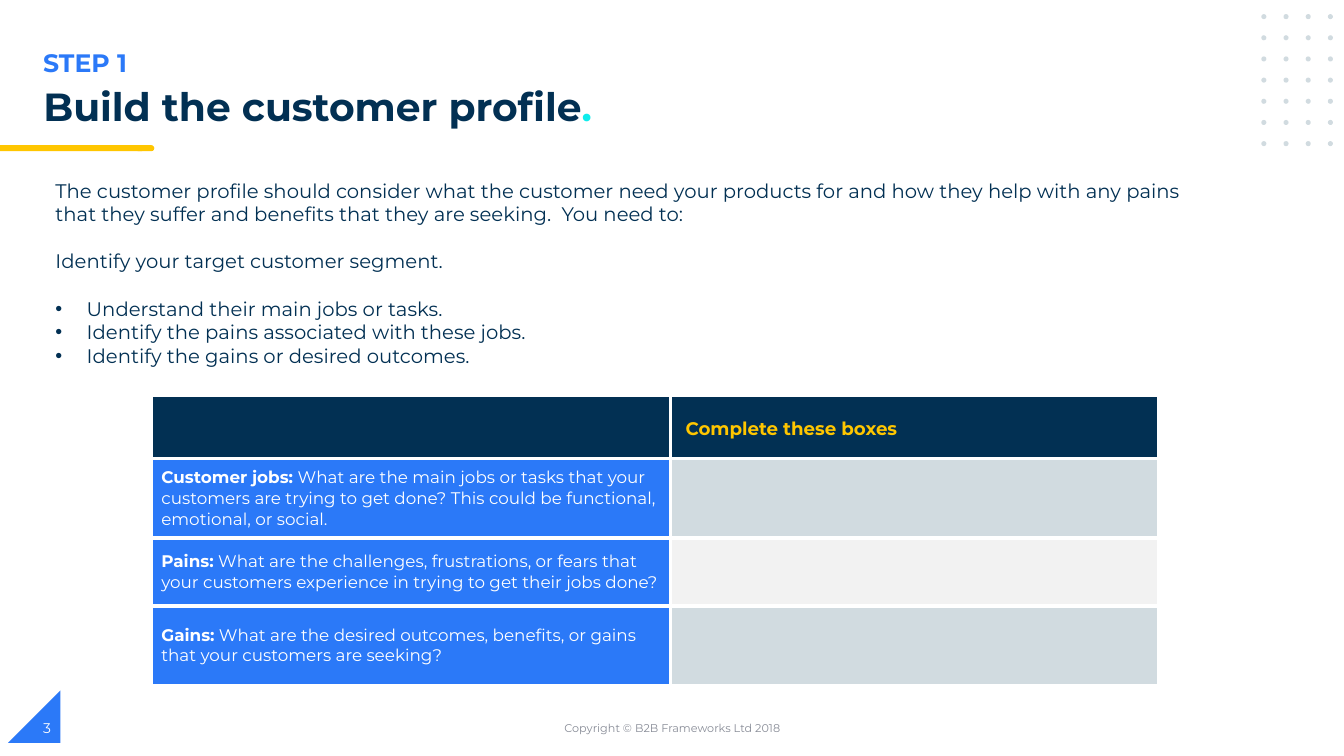
"""Build the customer profile slide with its heading, steps and worksheet table."""
from lxml import etree
from pptx import Presentation
from pptx.dml.color import RGBColor
from pptx.enum.shapes import MSO_SHAPE
from pptx.enum.text import MSO_ANCHOR, MSO_AUTO_SIZE, PP_ALIGN
from pptx.oxml.ns import qn
from pptx.util import Inches, Pt

OVAL, RECT = MSO_SHAPE.OVAL, MSO_SHAPE.RECTANGLE
WEDGE, CAP = MSO_SHAPE.RIGHT_TRIANGLE, MSO_SHAPE.FLOWCHART_TERMINATOR
TOP, MID = MSO_ANCHOR.TOP, MSO_ANCHOR.MIDDLE
LEFT, MIDDLE = PP_ALIGN.LEFT, PP_ALIGN.CENTER
FIXED = MSO_AUTO_SIZE.NONE

NAVY, BLUE, GOLD, AQUA = "023053", "2B79F8", "FFC600", "0EECEC"
MIST, PALE, GREY, WHITE = "D1DBE0", "F2F2F2", "888C97", "FFFFFF"

TITLE = [("Build the customer profile", NAVY), (".", AQUA)]
LABELS = [
    ("STEP 1", (0.33, 0.42, 6.69, 0.4), TOP, LEFT, 18, BLUE, True),
    ("Copyright © B2B Frameworks Ltd 2018", (4.42, 7.02, 4.5, 0.4),
     MID, MIDDLE, 8, GREY, False),
    ("3", (0.33, 7.02, 3, 0.4), MID, LEFT, 10, WHITE, False),
]
BODY = [
    ("The customer profile should consider what the customer need your "
     "products for and how they help with any pains that they suffer and "
     "benefits that they are seeking.  You need to:", 0, False),
    ("Identify your target customer segment.", 17, False),
    ("Understand their main jobs or tasks.", 17, True),
    ("Identify the pains associated with these jobs.", 0, True),
    ("Identify the gains or desired outcomes.", 0, True),
]
HEAD = "Complete these boxes"
ROWS = [
    ("Customer jobs:", " What are the main jobs or tasks that your customers "
     "are trying to get done? This could be functional, emotional, or social.",
     MIST),
    ("Pains:", " What are the challenges, frustrations, or fears that your "
     "customers experience in trying to get their jobs done?", PALE),
    ("Gains:", " What are the desired outcomes, benefits, or gains that your "
     "customers are seeking?", MIST),
]
WIDTHS = [5.15, 4.84]
HEIGHTS = [0.63, 0.79, 0.67, 0.79]
MARKS = [
    (WEDGE, (0.08, 6.85, 0.52, 0.52), BLUE),
    (CAP, (1.34, 1.44, 0.19, 0.06), GOLD),
    (RECT, (0, 1.44, 1.41, 0.06), GOLD),
]
DOTS = [(OVAL, (12.51 + 0.22 * col, 0.14 + 0.21 * row, 0.05, 0.05), MIST)
        for row in range(7) for col in range(4)]


def paint(hue):
    return RGBColor.from_string(hue)


def assign(item, vals):
    for name, val in vals.items():
        setattr(item, name, val)


def place(shape, box):
    names = ("left", "top", "width", "height")
    assign(shape, dict(zip(names, map(Inches, box))))


def write(para, text, size, hue, bold=False):
    run = para.add_run()
    run.text = text
    assign(run.font, {"name": "Montserrat", "size": Pt(size), "bold": bold})
    run.font.color.rgb = paint(hue)


def frame(shape, anchor):
    text = shape.text_frame
    assign(text, {
        "word_wrap": True, "auto_size": FIXED, "vertical_anchor": anchor,
        "margin_left": Inches(0.1), "margin_right": Inches(0.1),
        "margin_top": Inches(0.05), "margin_bottom": Inches(0.05)})
    return text


def bullet(para, on):
    props = para._p.get_or_add_pPr()
    step = Inches(0.31) if on else 0
    props.set("marL", str(step))
    props.set("indent", str(-step))
    if on:
        tint = etree.SubElement(props, qn("a:buClr"))
        etree.SubElement(tint, qn("a:srgbClr")).set("val", NAVY)
        etree.SubElement(props, qn("a:buFont")).set("typeface", "Arial")
        etree.SubElement(props, qn("a:buChar")).set("char", "•")
    else:
        etree.SubElement(props, qn("a:buNone"))


def draw(slide, kind, box, hue):
    shape = slide.shapes.add_shape(kind, *map(Inches, box))
    shape.shadow.inherit = False
    shape.fill.solid()
    shape.fill.fore_color.rgb = paint(hue)
    shape.line.fill.background()
    if kind == WEDGE:
        shape._element.spPr.find(qn("a:xfrm")).set("flipH", "1")


def dress(cell, hue, pad=0.1):
    props = cell._tc.get_or_add_tcPr()
    for side in ("lnL", "lnR", "lnT", "lnB"):
        edge = etree.SubElement(props, qn("a:" + side), w=str(Pt(3)))
        ink = etree.SubElement(edge, qn("a:solidFill"))
        etree.SubElement(ink, qn("a:srgbClr")).set("val", WHITE)
    cell.fill.solid()
    cell.fill.fore_color.rgb = paint(hue)
    assign(cell, {
        "vertical_anchor": MID, "margin_left": Inches(pad),
        "margin_right": Inches(0.1), "margin_top": 0, "margin_bottom": 0})


def fill_grid(slide):
    box = (1.5, 3.92, sum(WIDTHS), sum(HEIGHTS))
    grid = slide.shapes.add_table(
        len(HEIGHTS), len(WIDTHS), *map(Inches, box)).table
    assign(grid, {"first_row": False, "horz_banding": False})
    for col, width in zip(grid.columns, WIDTHS):
        col.width = Inches(width)
    for row, height in zip(grid.rows, HEIGHTS):
        row.height = Inches(height)
    dress(grid.cell(0, 0), NAVY)
    dress(grid.cell(0, 1), NAVY, 0.15)
    para = grid.cell(0, 1).text_frame.paragraphs[0]
    para.line_spacing = 1.15
    write(para, HEAD, 13, GOLD, True)
    for num, (name, ask, tint) in enumerate(ROWS, 1):
        dress(grid.cell(num, 0), BLUE)
        dress(grid.cell(num, 1), tint)
        para = grid.cell(num, 0).text_frame.paragraphs[0]
        write(para, name, 12, WHITE, True)
        write(para, ask, 12, WHITE)


def main():
    deck = Presentation()
    assign(deck, {"slide_width": Inches(13.33), "slide_height": Inches(7.5)})
    slide = deck.slides.add_slide(deck.slide_layouts[1])
    for mark in MARKS + DOTS:
        draw(slide, *mark)

    title = slide.shapes.title
    place(title, (0.33, 0.82, 11.23, 0.4))
    para = frame(title, TOP).paragraphs[0]
    assign(para, {"alignment": LEFT, "line_spacing": 0.9})
    for text, hue in TITLE:
        write(para, text, 28, hue, True)

    body = slide.placeholders[1]
    place(body, (0.45, 1.72, 11.41, 1.99))
    text = frame(body, TOP)
    for num, (line, gap, dot) in enumerate(BODY):
        para = text.add_paragraph() if num else text.paragraphs[0]
        bullet(para, dot)
        para.space_before = Pt(gap)
        write(para, line, 14, NAVY)

    for line, box, anchor, align, size, hue, bold in LABELS:
        label = slide.shapes.add_textbox(*map(Inches, box))
        para = frame(label, anchor).paragraphs[0]
        para.alignment = align
        write(para, line, size, hue, bold)

    fill_grid(slide)
    deck.save("out.pptx")


if __name__ == "__main__":
    main()
